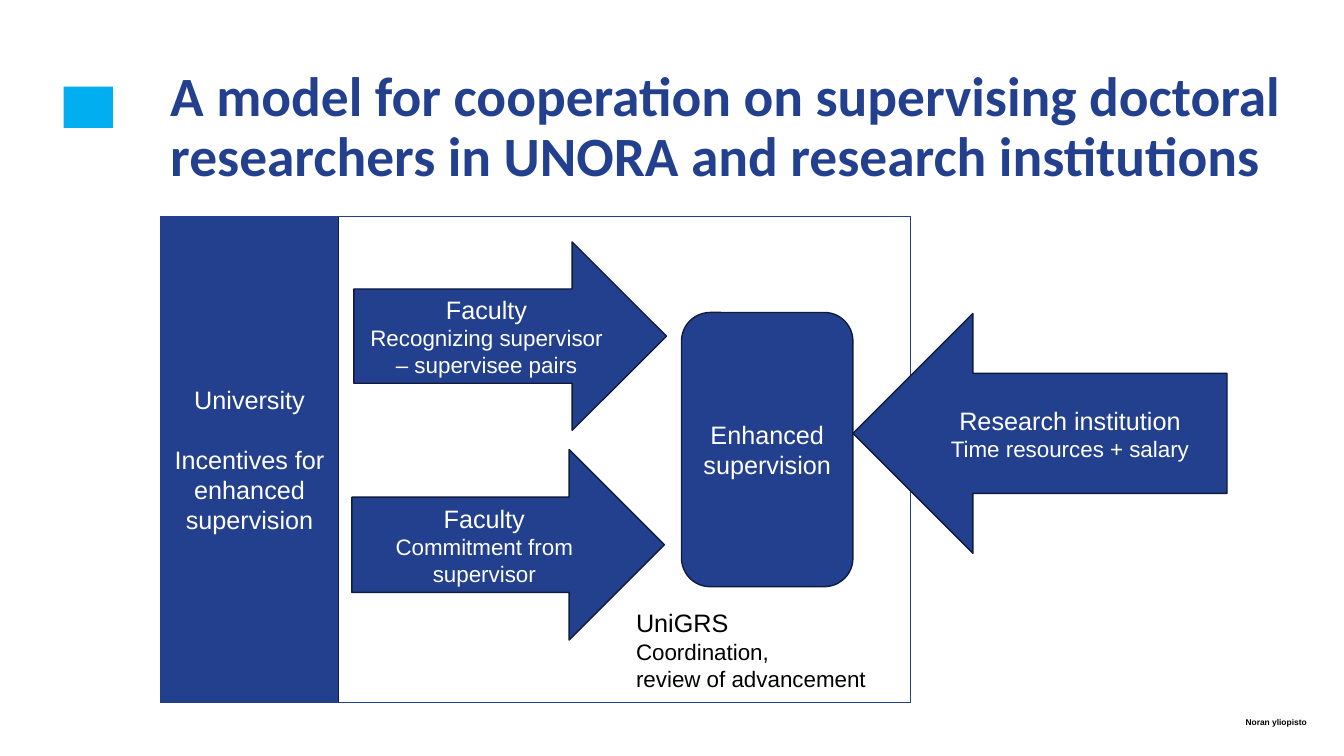
from pptx import Presentation
from pptx.dml.color import RGBColor
from pptx.enum.shapes import MSO_SHAPE
from pptx.enum.text import MSO_ANCHOR, PP_ALIGN
from pptx.util import Inches, Pt

RECT, ROUND = MSO_SHAPE.RECTANGLE, MSO_SHAPE.ROUNDED_RECTANGLE
LEFT_ARROW, RIGHT_ARROW = MSO_SHAPE.LEFT_ARROW, MSO_SHAPE.RIGHT_ARROW
TOP, MIDDLE = MSO_ANCHOR.TOP, MSO_ANCHOR.MIDDLE
LEFT, CENTER, RIGHT = PP_ALIGN.LEFT, PP_ALIGN.CENTER, PP_ALIGN.RIGHT
COLORS = {"blue": "23408F", "navy": "0F1C3F", "cyan": "01AEEF",
          "white": "FFFFFF", "black": "000000"}


def write(sp, lines, color, align, anchor, font="Arial", bold=False):
    tf = sp.text_frame
    tf.word_wrap = True
    tf.vertical_anchor = anchor
    for i, (text, size) in enumerate(lines):
        p = tf.paragraphs[0] if i == 0 else tf.add_paragraph()
        p.alignment = align
        r = p.add_run()
        r.text = text
        r.font.color.rgb = RGBColor.from_string(COLORS[color])
        for name, value in {"size": Pt(size), "name": font, "bold": bold}.items():
            setattr(r.font, name, value)
    return tf


def add_box(kind, box, fill, line):
    sp = s.shapes.add_shape(kind, *map(Inches, box))
    sp.shadow.inherit = False
    if fill:
        sp.fill.solid()
        sp.fill.fore_color.rgb = RGBColor.from_string(COLORS[fill])
    else:
        sp.fill.background()
    if line:
        sp.line.color.rgb = RGBColor.from_string(COLORS[line])
        sp.line.width = Pt(1)
    else:
        sp.line.fill.background()
    return sp


prs = Presentation()
prs.slide_width, prs.slide_height = Inches(13.33), Inches(7.5)
s = prs.slides.add_slide(prs.slide_layouts[6])

add_box(RECT, (0.63, 0.86, 0.49, 0.41), "cyan", None)

title = s.shapes.add_textbox(Inches(1.59), Inches(0.63), Inches(11.37), Inches(0.78))
tf = write(title, [("A model for cooperation on supervising doctoral researchers "
                    "in UNORA and research institutions", 39.6)],
           "blue", LEFT, TOP, "Calibri", True)
tf.paragraphs[0].line_spacing = 0.9

university = add_box(RECT, (1.59, 2.15, 1.77, 4.82), "blue", "navy")
tf = write(university, [("University", 18), ("Incentives for enhanced supervision", 18)],
           "white", CENTER, MIDDLE)
tf.paragraphs[1].space_before = Pt(21)

add_box(RECT, (1.59, 2.15, 7.44, 4.82), None, "blue")

blocks = [
    (LEFT_ARROW, (8.46, 3.11, 3.71, 2.38),
     [("Research institution", 18), ("Time resources + salary", 16)]),
    (RIGHT_ARROW, (3.51, 2.4, 3.1, 1.87),
     [("Faculty", 18), ("Recognizing supervisor – supervisee pairs", 16)]),
    (RIGHT_ARROW, (3.49, 4.46, 3.1, 1.89),
     [("Faculty", 18), ("Commitment from supervisor", 16)]),
    (ROUND, (6.76, 3.1, 1.7, 2.72), [("Enhanced supervision", 18)]),
]
for kind, box, lines in blocks:
    write(add_box(kind, box, "blue", "navy"), lines, "white", CENTER, MIDDLE)

coordination = s.shapes.add_textbox(Inches(6.21), Inches(5.98), Inches(3.19), Inches(0.94))
write(coordination, [("UniGRS", 18), ("Coordination,", 16), ("review of advancement", 16)],
      "black", LEFT, TOP)

footer = s.shapes.add_textbox(Inches(10.62), Inches(7.04), Inches(2.34), Inches(0.24))
tf = write(footer, [("Noran yliopisto", 6)], "black", RIGHT, MIDDLE, bold=True)
for side in ("left", "top", "right", "bottom"):
    setattr(tf, f"margin_{side}", 0)

prs.save("out.pptx")
